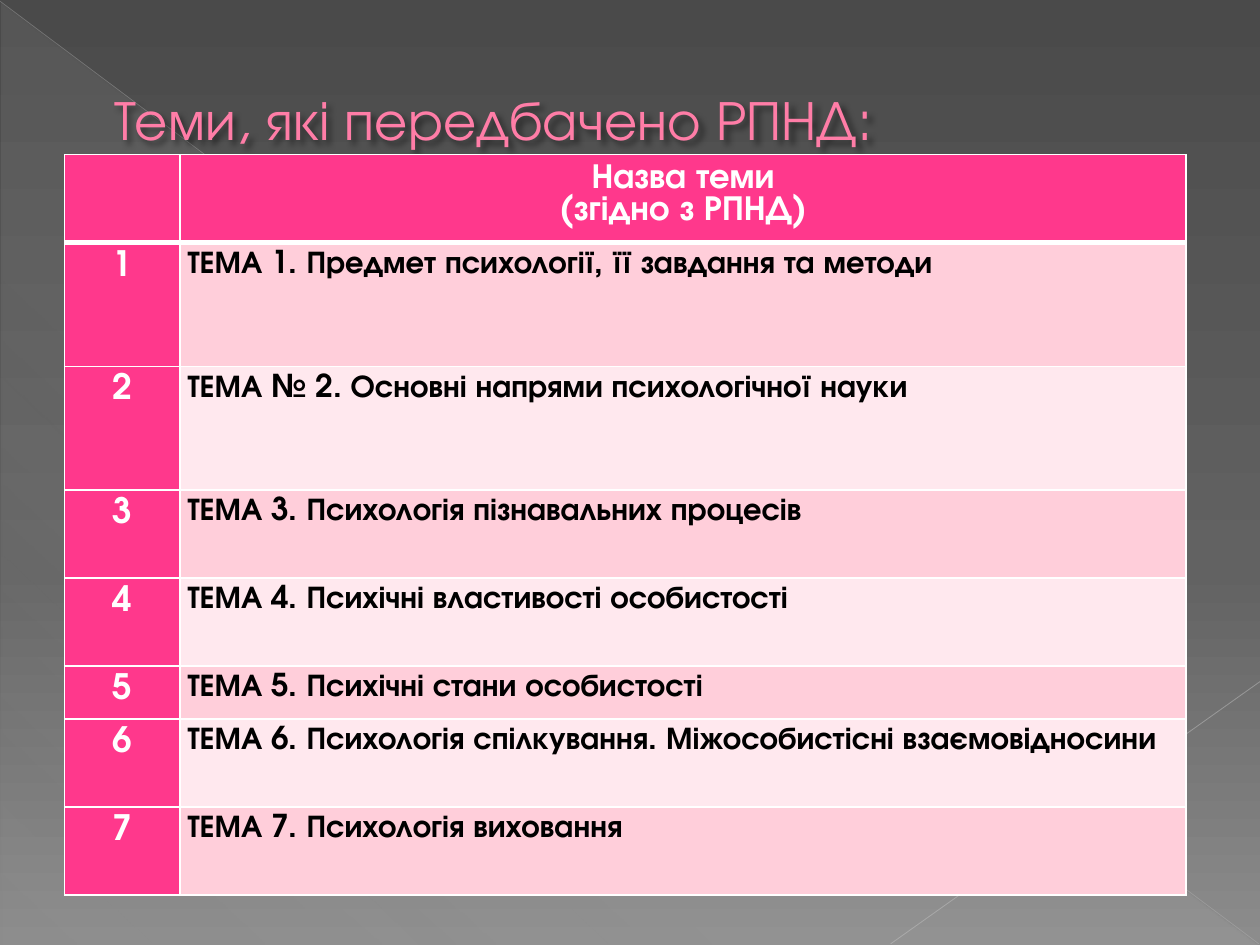
from lxml.etree import SubElement
from pptx import Presentation
from pptx.dml.color import RGBColor
from pptx.enum.shapes import MSO_CONNECTOR, MSO_SHAPE
from pptx.enum.text import MSO_ANCHOR, PP_ALIGN
from pptx.oxml import parse_xml
from pptx.oxml.ns import nsdecls, qn
from pptx.util import Pt

# Content
TITLE = "Теми, які передбачено РПНД:"
HEADER = "Назва теми\n(згідно з РПНД)"
TOPICS = [  # text, row height
    ("ТЕМА 1. Предмет психології, її завдання та методи", 70.7),
    ("ТЕМА № 2. Основні напрями психологічної науки", 70.7),
    ("ТЕМА 3. Психологія пізнавальних процесів", 50.3),
    ("ТЕМА 4. Психічні властивості особистості", 50.3),
    ("ТЕМА 5. Психічні стани особистості", 30.2),
    ("ТЕМА 6. Психологія спілкування. Міжособистісні взаємовідносини", 50.3),
    ("ТЕМА 7. Психологія виховання", 50.3),
]
HEADER_HEIGHT = 50.3
COLUMN_WIDTHS = [66, 574.8]

# Style
FONT = "TeX Gyre Adventor"
PINK, WHITE, BLACK = "FF388C", "FFFFFF", "000000"
BANDS = ["FFCEDA", "FFE8EE"]
BACKGROUND = [(0, "4A4A4A", 100), (60, "626262", 100), (100, "8C8C8C", 100)]
SHEEN = [(0, "D2D2D2", 10), (70, "D2D2D2", 8), (100, "D2D2D2", 1)]
RAYS = [  # start, end, colour, width, opacity
    ((0, 0.7), (719.3, 539.3), "BFBFBF", 0.39, 35),
    ((720, 389.5), (509, 539.3), "C6C6C6", 0.47, 45),
]


def color(value):
    return RGBColor.from_string(value)


def set_gradient(parent, stops, angle):
    """Replace the solid fill of parent with a linear gradient."""
    marks = "".join(
        f'<a:gs pos="{position * 1000}"><a:srgbClr val="{value}">'
        f'<a:alpha val="{opacity * 1000}"/></a:srgbClr></a:gs>'
        for position, value, opacity in stops)
    gradient = parse_xml(
        f'<a:gradFill {nsdecls("a")} rotWithShape="1"><a:gsLst>{marks}</a:gsLst>'
        f'<a:lin ang="{angle * 60000}" scaled="0"/></a:gradFill>')
    parent.replace(parent.find(qn("a:solidFill")), gradient)


def style_text(frame, size, value, bold, align):
    for para in frame.paragraphs:
        para.alignment = align
        for span in para.runs:
            span.font.name = FONT
            span.font.size = Pt(size)
            span.font.bold = bold
            span.font.color.rgb = color(value)


def set_borders(cell, bottom, top):
    properties = cell._tc.get_or_add_tcPr()
    widths = {"lnL": 1, "lnR": 1, "lnT": top, "lnB": bottom}
    for index, (side, width) in enumerate(widths.items()):
        properties.insert(index, parse_xml(
            f'<a:{side} {nsdecls("a")} w="{Pt(width)}"><a:solidFill>'
            f'<a:srgbClr val="{WHITE}"/></a:solidFill></a:{side}>'))


def fill_cell(cell, text, fill, size, value, align, top=1, bottom=1):
    cell.margin_left = cell.margin_right = Pt(4.3)
    cell.margin_top = cell.margin_bottom = Pt(4.3)
    cell.fill.solid()
    cell.fill.fore_color.rgb = color(fill)
    cell.text_frame.text = text
    style_text(cell.text_frame, size, value, True, align)
    set_borders(cell, bottom, top)


deck = Presentation()
deck.slide_width, deck.slide_height = Pt(720), Pt(540)
page = deck.slides.add_slide(deck.slide_layouts[5])

# Background
page.background.fill.solid()
set_gradient(page._element.cSld.bg.bgPr, BACKGROUND, 90)
sheen = page.shapes.add_shape(
    MSO_SHAPE.RIGHT_TRIANGLE, Pt(0.7), Pt(1.4), Pt(718.6), Pt(538.6))
sheen.shadow.inherit = False
sheen.line.fill.background()
sheen.fill.solid()
set_gradient(sheen._element.spPr, SHEEN, 133)

for start, end, value, width, opacity in RAYS:
    ray = page.shapes.add_connector(
        MSO_CONNECTOR.STRAIGHT, *map(Pt, start), *map(Pt, end))
    ray.line.color.rgb = color(value)
    ray.line.width = Pt(width)
    properties = ray._element.spPr
    SubElement(next(properties.iter(qn("a:srgbClr"))), qn("a:alpha"),
               val=str(opacity * 1000))
    SubElement(properties, qn("a:effectLst"))

# Title, in front of the background, with a soft shadow
title = page.shapes.title
page.shapes._spTree.append(title._element)
title.left, title.top, title.width, title.height = map(Pt, (20.2, 37.4, 648, 51.1))
frame = title.text_frame
frame.text = TITLE
frame.vertical_anchor = MSO_ANCHOR.MIDDLE
frame.margin_left, frame.margin_top = Pt(45.4), Pt(12.8)
style_text(frame, 32, "FF7DA7", False, PP_ALIGN.LEFT)
title._element.spPr.append(parse_xml(
    f'<a:effectLst {nsdecls("a")}><a:outerShdw blurRad="{Pt(3)}" dist="{Pt(3)}" '
    f'dir="2700000"><a:srgbClr val="{BLACK}"><a:alpha val="45000"/></a:srgbClr>'
    f'</a:outerShdw></a:effectLst>'))

# Table of topics
heights = [HEADER_HEIGHT] + [height for _, height in TOPICS]
table = page.shapes.add_table(
    len(heights), len(COLUMN_WIDTHS), Pt(36.9), Pt(88.4),
    Pt(sum(COLUMN_WIDTHS)), Pt(sum(heights))).table
for column, width in zip(table.columns, COLUMN_WIDTHS):
    column.width = Pt(width)
for row, height in zip(table.rows, heights):
    row.height = Pt(height)

for index, text in enumerate(["", HEADER]):
    fill_cell(table.cell(0, index), text, PINK, 20, WHITE, PP_ALIGN.CENTER, bottom=3)
for number, (text, _) in enumerate(TOPICS, start=1):
    top = 3 if number == 1 else 1
    align = PP_ALIGN.JUSTIFY if number == 1 else PP_ALIGN.LEFT
    fill_cell(table.cell(number, 0), str(number), PINK, 20, WHITE,
              PP_ALIGN.CENTER, top)
    fill_cell(table.cell(number, 1), text, BANDS[(number - 1) % 2], 18, BLACK,
              align, top)

deck.save("out.pptx")
